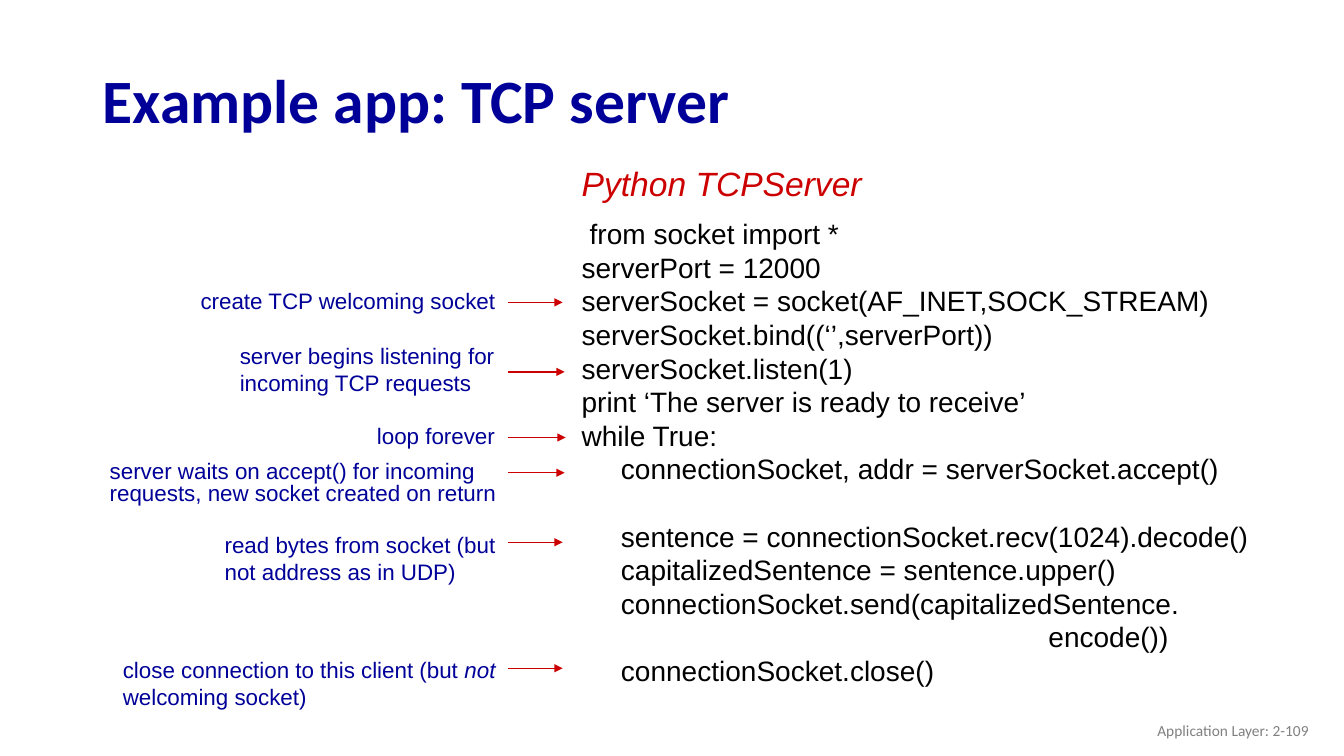
from pptx import Presentation
from pptx.dml.color import RGBColor
from pptx.enum import shapes, text
from pptx.oxml.ns import qn
from pptx.util import Inches, Pt
from lxml import etree

NAVY = RGBColor(0x00, 0x00, 0x99)
RED = RGBColor(0xCC, 0x00, 0x00)
BLACK = RGBColor(0x00, 0x00, 0x00)
GRAY = RGBColor(0x80, 0x80, 0x80)

TITLE = "Example app: TCP server"
HEADING = "Python TCPServer"
FOOTER = "Application Layer: 2-109"

BLOCK = 0.39
CODE = [
    ("from socket import *", 0.08, 0),
    ("serverPort = 12000", 0, 0),
    ("serverSocket = socket(AF_INET,SOCK_STREAM)", 0, 0),
    ("serverSocket.bind((‘’,serverPort))", 0, 0),
    ("serverSocket.listen(1)", 0, 0),
    ("print ‘The server is ready to receive’", 0, 0),
    ("while True:", 0, 0),
    ("connectionSocket, addr = serverSocket.accept()", BLOCK, 0),
    ("sentence = connectionSocket.recv(1024).decode()", BLOCK, 24),
    ("capitalizedSentence = sentence.upper()", BLOCK, 0),
    ("connectionSocket.send(capitalizedSentence.", BLOCK, 0),
    ("encode())", 4.63, 0),
    ("connectionSocket.close()", BLOCK, 0),
]

ARROW_LEFT = 5.04
NOTES = [
    (["create TCP welcoming socket"], (1.89, 2.8, 3.35, 0.37), 19.2, (5.58, 3.0)),
    (["server begins listening for incoming TCP requests"],
     (2.28, 3.35, 3.14, 0.64), 19.2, (5.6, 3.69)),
    (["loop forever"], (3.64, 4.18, 2.03, 0.33), 16, (5.61, 4.34)),
    (["server waits on accept() for incoming requests, new socket created on return"],
     (0.99, 4.53, 4.4, 0.55), 16, (5.6, 4.69)),
    (["read bytes from socket (but not address as in UDP)"],
     (2.13, 5.22, 3.0, 0.64), 19.2, (5.58, 5.38)),
    (["close connection to this client (but ", "not", " welcoming socket)"],
     (1.12, 6.46, 4.27, 0.64), 19.2, (5.58, 6.63)),
]


def style(r, size, color, name="Arial", bold=False, italic=False):
    r.font.name = name
    r.font.size = Pt(size)
    r.font.color.rgb = color
    r.font.bold = bold
    r.font.italic = italic


def add_text(s, box):
    tf = s.shapes.add_textbox(*map(Inches, box)).text_frame
    tf.word_wrap = True
    return tf


def add_arrow(s, right, y):
    c = s.shapes.add_connector(shapes.MSO_CONNECTOR.STRAIGHT, Inches(ARROW_LEFT),
                               Inches(y), Inches(right), Inches(y))
    c.line.color.rgb = RED
    c.line.width = Pt(1)
    etree.SubElement(c.line._get_or_add_ln(), qn("a:tailEnd"), type="triangle")
    etree.SubElement(c._element.spPr, qn("a:effectLst"))


def add_title(s):
    sp = s.shapes.title
    sp.left, sp.top, sp.width, sp.height = map(Inches, (0.92, 0.49, 11.5, 0.98))
    tf = sp.text_frame
    tf.text = TITLE
    tf.vertical_anchor = text.MSO_ANCHOR.MIDDLE
    p = tf.paragraphs[0]
    p.alignment = text.PP_ALIGN.LEFT
    style(p.runs[0], 44, NAVY, "Calibri", bold=True)


def add_code(s):
    tf = add_text(s, (5.67, 2.1, 6.88, 4.8))
    for i, (line, indent, gap) in enumerate(CODE):
        p = tf.add_paragraph() if i else tf.paragraphs[0]
        p.text = line
        p.line_spacing = Pt(24)
        p.space_before = Pt(gap)
        p._p.get_or_add_pPr().set("marL", str(Inches(indent)))
        style(p.runs[0], 20, BLACK)


def add_note(s, parts, box, spacing, tip):
    p = add_text(s, box).paragraphs[0]
    p.line_spacing = Pt(spacing)
    for i, part in enumerate(parts):
        r = p.add_run()
        r.text = part
        style(r, 16, NAVY, italic=i == 1)
    add_arrow(s, *tip)


def add_footer(s):
    tf = add_text(s, (10.08, 7.05, 3, 0.4))
    tf.text = FOOTER
    tf.vertical_anchor = text.MSO_ANCHOR.MIDDLE
    p = tf.paragraphs[0]
    p.alignment = text.PP_ALIGN.RIGHT
    style(p.runs[0], 11, GRAY, "Calibri")


def main():
    prs = Presentation()
    prs.slide_width, prs.slide_height = Inches(13.33), Inches(7.5)
    s = prs.slides.add_slide(prs.slide_layouts[5])
    add_title(s)
    add_code(s)
    tf = add_text(s, (5.67, 1.57, 3.09, 0.51))
    tf.text = HEADING
    style(tf.paragraphs[0].runs[0], 24, RED, italic=True)
    for note in NOTES:
        add_note(s, *note)
    add_footer(s)
    prs.save("out.pptx")


if __name__ == "__main__":
    main()
